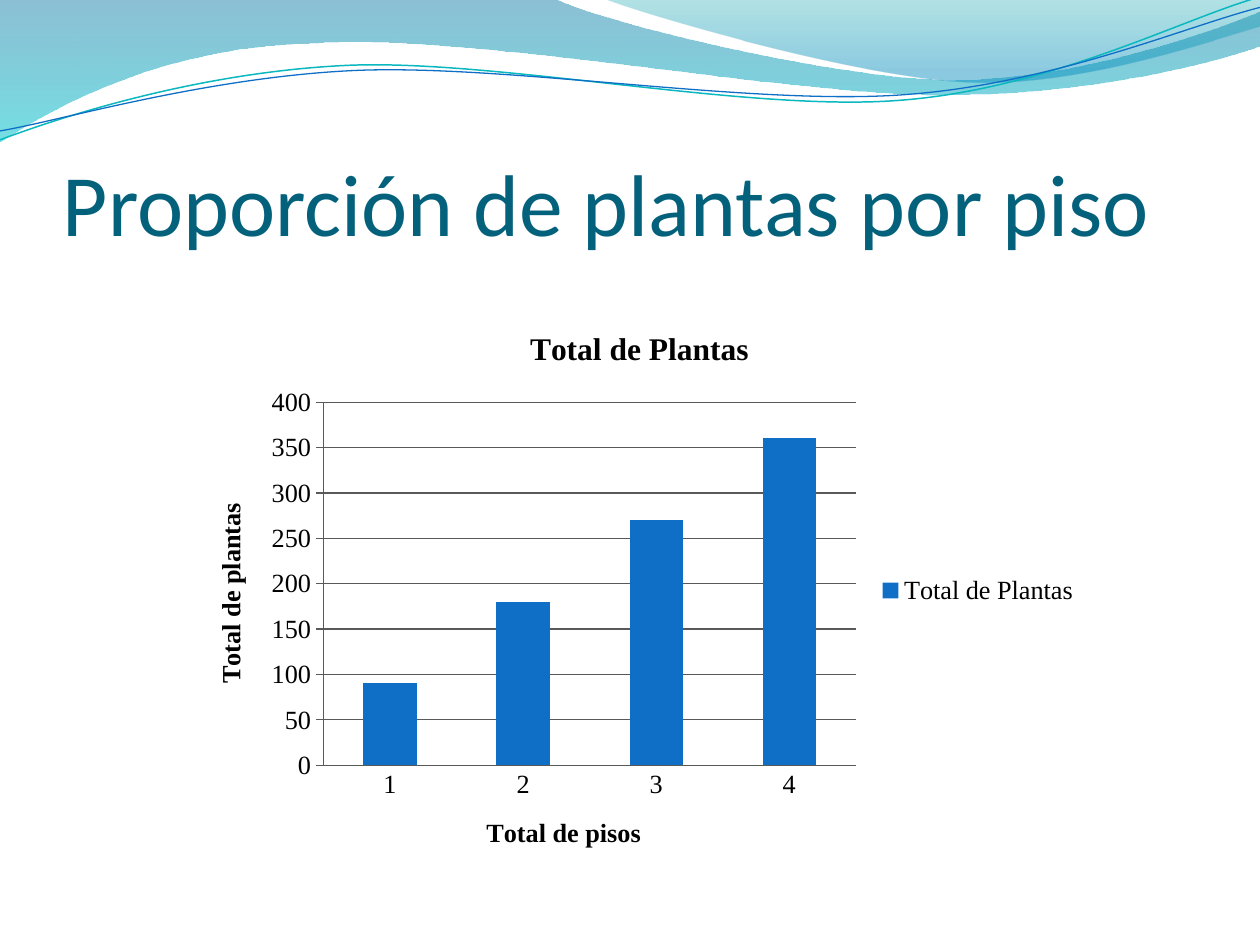
from dataclasses import dataclass
from typing import Optional

from lxml import etree
from pptx import Presentation
from pptx.chart.data import CategoryChartData
from pptx.dml.color import RGBColor
from pptx.enum import chart as charts, text
from pptx.oxml import parse_xml
from pptx.oxml.ns import nsdecls, qn
from pptx.util import Cm, Pt


@dataclass(frozen=True)
class Theme:
    title_font: str = "Calibri"
    chart_font: str = "Times New Roman"
    title_size: float = 50
    chart_title_size: float = 18
    chart_size: float = 15
    title: str = "04617B"
    ink: str = "000000"
    bar: str = "0F6FC6"
    teal: str = "0AB8BF"
    grid: str = "595959"


THEME = Theme()


@dataclass(frozen=True)
class Stop:
    position: int
    color: str
    opacity: int


@dataclass(frozen=True)
class Wave:
    """Outline in cm: a start, then line ends (2 numbers) or Bezier curves (6)."""
    start: tuple[float, float]
    segments: tuple[tuple[float, ...], ...]
    stops: tuple[Stop, ...] = ()
    line: Optional[str] = None
    line_width: float = 0
    rotation: float = 0


WAVES = (
    Wave((0, 0), (
        (11.18, -0.03),
        (12.09, 0.43, 16.87, 1.6, 19.25, 1.6),
        (21.67, 1.6, 24.33, 0.66, 25.4, 0.23),
        (25.43, 0.91),
        (24.97, 1.12, 22.1, 1.93, 18.95, 1.91),
        (15.8, 1.91, 9.7, 0.71, 6.53, 0.86),
        (3.28, 0.91, 1.17, 2.11, -0.03, 2.87),
        (0, 0),
    ), stops=(Stop(0, "0074A1", 45), Stop(100, "00C6CF", 55))),
    Wave((12.17, -0.03), (
        (12.93, 0.28, 17.32, 1.57, 19.53, 1.65),
        (21.74, 1.75, 24.41, 0.81, 25.4, 0.53),
        (25.4, 0),
        (12.17, -0.03),
    ), stops=(Stop(0, "00A1A9", 30), Stop(80, "008BBF", 45))),
    Wave((-0.05, 2.22), (
        (1.19, 1.82, 4.02, 1.04, 7.05, 1.05),
        (10.05, 1.07, 15.02, 2.37, 18.08, 2.28),
        (21.13, 2.2, 23.87, 0.91, 25.41, 0.55),
    ), line=THEME.teal, line_width=0.85, rotation=-2.7),
    Wave((-0.04, 2.04), (
        (1.16, 1.9, 4.18, 1.15, 7.2, 1.16),
        (10.25, 1.18, 15.13, 2.25, 18.18, 2.17),
        (21.21, 2.1, 23.93, 1.06, 25.45, 0.75),
    ), line=THEME.bar, line_width=0.75, rotation=-2.7),
)


def bend(shape, segments: tuple[tuple[float, ...], ...]) -> None:
    """Join each three straight steps that stand for a curve into one Bezier."""
    steps = iter(list(shape._element.spPr.iter(qn("a:lnTo"))))
    for segment in segments:
        parts = [next(steps) for _ in range(len(segment) // 2)]
        if len(parts) == 3:
            curve = etree.Element(qn("a:cubicBezTo"))
            parts[0].addprevious(curve)
            for part in parts:
                curve.append(part[0])
                part.getparent().remove(part)


def draw_wave(slide, wave: Wave) -> None:
    builder = slide.shapes.build_freeform(*map(Cm, wave.start))
    points = [(Cm(x), Cm(y)) for segment in wave.segments
              for x, y in zip(segment[::2], segment[1::2])]
    builder.add_line_segments(points, close=bool(wave.stops))
    shape = builder.convert_to_shape()
    bend(shape, wave.segments)
    shape.rotation = wave.rotation
    shape.shadow.inherit = False
    shape.fill.background()
    if wave.line:
        shape.line.color.rgb = RGBColor.from_string(wave.line)
        shape.line.width = Pt(wave.line_width)
    else:
        shape.line.fill.background()
    if wave.stops:
        stops = "".join(
            f'<a:gs pos="{s.position * 1000}"><a:srgbClr val="{s.color}">'
            f'<a:alpha val="{s.opacity * 1000}"/></a:srgbClr></a:gs>' for s in wave.stops)
        properties = shape._element.spPr
        properties.replace(properties.find(qn("a:noFill")), parse_xml(
            f'<a:gradFill {nsdecls("a")} rotWithShape="1"><a:gsLst>{stops}</a:gsLst>'
            '<a:lin ang="5400000" scaled="0"/></a:gradFill>'))


def style_font(font, *, name: str, size: float, color: str, bold: bool = False) -> None:
    font.name, font.size, font.bold = name, Pt(size), bold
    font.color.rgb = RGBColor.from_string(color)


def write(frame, words: str, **style) -> None:
    run = frame.paragraphs[0].add_run()
    run.text = words
    style_font(run.font, **style)


def add_title(slide) -> None:
    frame = slide.shapes.add_textbox(Cm(1.27), Cm(1.95), Cm(22.86), Cm(3.17)).text_frame
    frame.word_wrap = True
    frame.vertical_anchor = text.MSO_ANCHOR.BOTTOM
    frame.margin_left = frame.margin_right = frame.margin_bottom = 0
    write(frame, "Proporción de plantas por piso",
          name=THEME.title_font, size=THEME.title_size, color=THEME.title)


def add_plants_chart(slide) -> None:
    data = CategoryChartData()
    data.categories = ["1", "2", "3", "4"]
    data.add_series("Total de Plantas", (90, 180, 270, 360))
    chart = slide.shapes.add_chart(charts.XL_CHART_TYPE.COLUMN_CLUSTERED, Cm(3.76), Cm(6.15),
                                   Cm(18.26), Cm(11.51), data).chart
    base = dict(name=THEME.chart_font, color=THEME.ink)
    style_font(chart.font, size=THEME.chart_size, **base)
    write(chart.chart_title.text_frame, "Total de Plantas",
          size=THEME.chart_title_size, bold=True, **base)
    chart.chart_title.include_in_layout = False

    floors, plants = chart.category_axis, chart.value_axis
    for axis, words in ((floors, "Total de pisos"), (plants, "Total de plantas")):
        write(axis.axis_title.text_frame, words, size=THEME.chart_size, bold=True, **base)
    floors.major_tick_mark = charts.XL_TICK_MARK.NONE
    plants.major_tick_mark = charts.XL_TICK_MARK.CROSS
    plants.minimum_scale, plants.maximum_scale, plants.major_unit = 0, 400, 50
    plants.has_major_gridlines = True
    for rule in (floors.format.line, plants.format.line, plants.major_gridlines.format.line):
        rule.color.rgb = RGBColor.from_string(THEME.grid)
        rule.width = Pt(0.75)

    chart.has_legend = True
    chart.legend.position = charts.XL_LEGEND_POSITION.RIGHT
    chart.legend.include_in_layout = False
    columns = chart.plots[0]
    columns.gap_width = 150
    columns.vary_by_categories = False
    fill = columns.series[0].format.fill
    fill.solid()
    fill.fore_color.rgb = RGBColor.from_string(THEME.bar)


def main() -> None:
    deck = Presentation()
    deck.slide_width, deck.slide_height = Cm(25.4), Cm(19.05)
    slide = deck.slides.add_slide(deck.slide_layouts[6])
    for wave in WAVES:
        draw_wave(slide, wave)
    add_title(slide)
    add_plants_chart(slide)
    deck.save("out.pptx")


if __name__ == "__main__":
    main()
